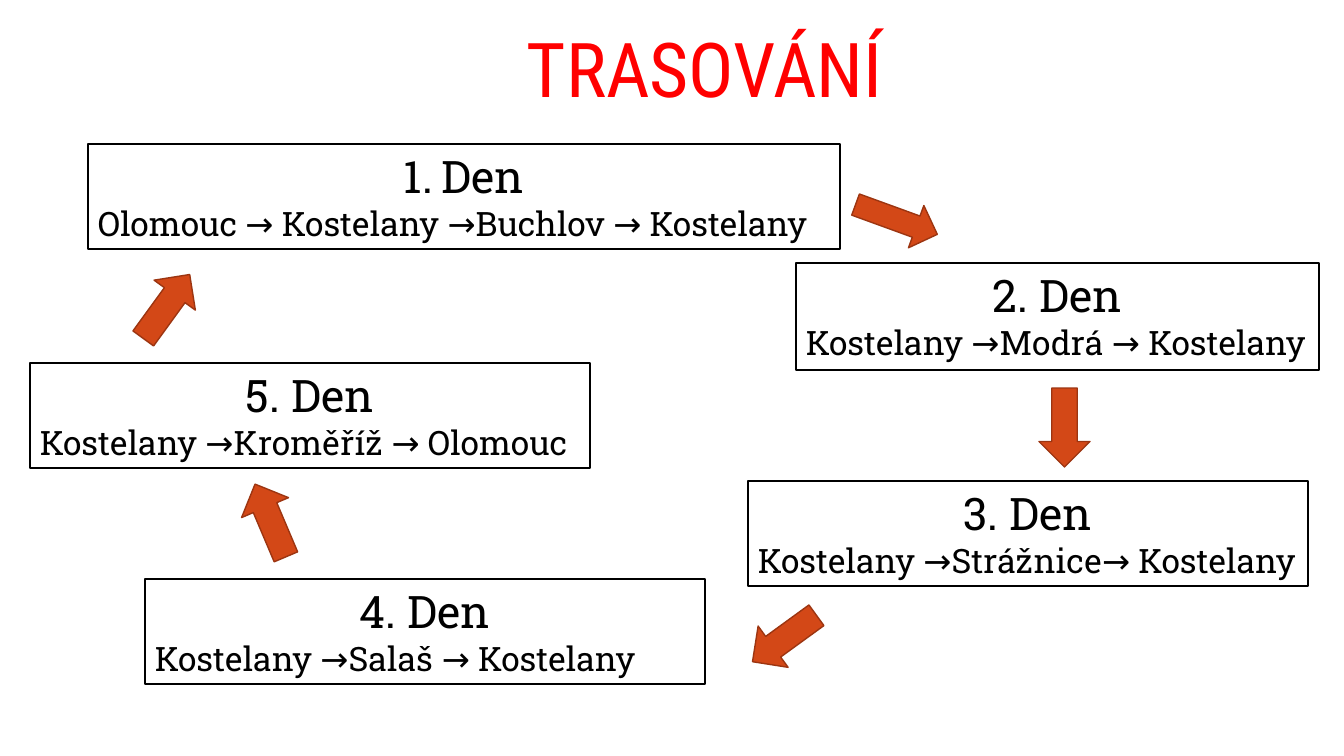
"""Build the slide with the five-day route as a loop of boxes and arrows."""
from lxml.etree import SubElement
from pptx import Presentation
from pptx.dml.color import RGBColor
from pptx.enum.shapes import MSO_SHAPE as SHAPE
from pptx.enum.text import MSO_ANCHOR as ANCHOR, PP_ALIGN as ALIGN
from pptx.oxml.ns import qn
from pptx.util import Pt

TITLE = ("TRASOVÁNÍ", (517, -10, 731, 167))
DAYS = [
    ("Den", "Olomouc → Kostelany →Buchlov → Kostelany", (88, 144, 752, 105)),
    ("2. Den", "Kostelany →Modrá → Kostelany", (796, 263, 523, 107)),
    ("3. Den", "Kostelany →Strážnice→ Kostelany", (748, 481, 560, 105)),
    ("4. Den", "Kostelany →Salaš → Kostelany", (145, 579, 560, 105)),
    ("5. Den", "Kostelany →Kroměříž → Olomouc", (30, 363, 560, 105)),
]
ARROWS = [
    ((853, 197, 87, 45), 20),
    ((1025, 402, 79, 51), 90),
    ((745, 613, 79, 51), 144),
    ((231, 495, 79, 51), 247),
    ((127, 281, 79, 51), 306),
]
COLORS = {"title": "FF0000", "text": "000000", "box": "FFFFFF",
          "border": "000000", "arrow": "D34817", "edge": "9C3511"}
TITLE_FONT, BODY_FONT = "Roboto Condensed", "Roboto Slab"
SLIDE = (1344, 756)
HANGING = 38
SCALE = 12192000 / SLIDE[0]


def emu(*lengths):
    return [round(length * SCALE) for length in lengths]


def paint(shape, fill, line):
    shape.fill.solid()
    shape.fill.fore_color.rgb = RGBColor.from_string(COLORS[fill])
    shape.line.color.rgb = RGBColor.from_string(COLORS[line])
    shape.line.width = Pt(1)


def write(para, text, size, font, color):
    para.add_run().text = text
    para.font.size = Pt(size)
    para.font.name = font
    para.font.color.rgb = RGBColor.from_string(COLORS[color])


def number(para):
    indent, = emu(HANGING)
    properties = para._p.get_or_add_pPr()
    properties.set("marL", str(indent))
    properties.set("indent", str(-indent))
    SubElement(properties, qn("a:buFont"), typeface="+mj-lt")
    SubElement(properties, qn("a:buAutoNum"), type="arabicPeriod")


def add_title(page, text, place):
    frame = page.shapes.add_textbox(*emu(*place)).text_frame
    frame.word_wrap = True
    frame.vertical_anchor = ANCHOR.MIDDLE
    para = frame.paragraphs[0]
    para.line_spacing = 0.9
    write(para, text, 54, TITLE_FONT, "title")


def add_day(page, heading, route, place):
    box = page.shapes.add_textbox(*emu(*place))
    paint(box, "box", "border")
    frame = box.text_frame
    frame.word_wrap = True
    para = frame.paragraphs[0]
    para.alignment = ALIGN.CENTER
    if not heading[0].isdigit():
        number(para)
    write(para, heading, 32, BODY_FONT, "text")
    write(frame.add_paragraph(), route, 24, BODY_FONT, "text")


def add_arrow(page, place, angle):
    arrow = page.shapes.add_shape(SHAPE.RIGHT_ARROW, *emu(*place))
    arrow.rotation = angle
    arrow.shadow.inherit = False
    paint(arrow, "arrow", "edge")


def main():
    deck = Presentation()
    deck.slide_width, deck.slide_height = emu(*SLIDE)
    page = deck.slides.add_slide(deck.slide_layouts[6])
    add_title(page, *TITLE)
    for day in DAYS:
        add_day(page, *day)
    for arrow in ARROWS:
        add_arrow(page, *arrow)
    deck.save("out.pptx")


if __name__ == "__main__":
    main()
